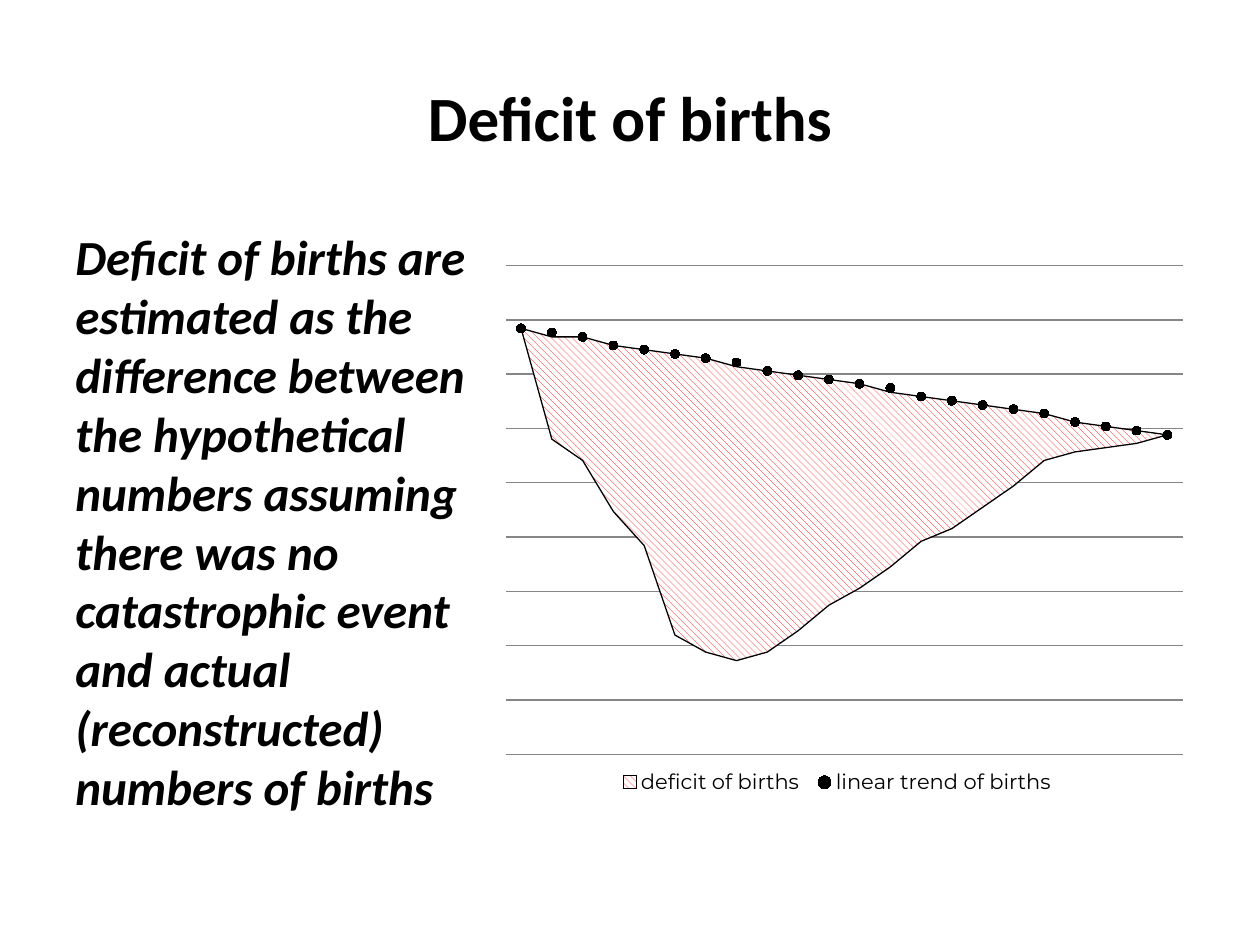
from dataclasses import dataclass

from pptx import Presentation
from pptx.chart.data import CategoryChartData
from pptx.dml.color import RGBColor
from pptx.enum.chart import XL_CHART_TYPE as ChartType
from pptx.enum.chart import XL_LEGEND_POSITION as LegendPosition
from pptx.enum.chart import XL_MARKER_STYLE as MarkerStyle
from pptx.enum.dml import MSO_PATTERN as Pattern
from pptx.enum.text import MSO_ANCHOR as Anchor
from pptx.enum.text import PP_ALIGN as Align
from pptx.oxml import parse_xml
from pptx.oxml.ns import nsdecls
from pptx.util import Cm, Pt

BLACK = RGBColor(0x00, 0x00, 0x00)
WHITE = RGBColor(0xFF, 0xFF, 0xFF)
RED = RGBColor(0xFF, 0x00, 0x00)
GRID_GRAY = RGBColor(0x86, 0x86, 0x86)

TITLE_ONLY = 5
GRID_STEP = 12.75
GRID_INTERVALS = 9

ACTUAL = (100, 74, 69, 57, 49, 28, 24, 22, 24, 29, 35,
          39, 44, 50, 53, 58, 63, 69, 71, 72, 73, 75)
DEFICIT = (0, 24, 29, 39, 46, 66, 69, 69, 66, 60, 53,
           48, 41, 34, 30, 24, 18, 11, 7, 5, 3, 0)
TREND = (100, 99, 98, 96, 95, 94, 93, 92, 90, 89, 88,
         87, 86, 84, 83, 82, 81, 80, 78, 77, 76, 75)


@dataclass(frozen=True)
class Box:
    left: float
    top: float
    width: float
    height: float

    def lengths(self):
        return tuple(Cm(v) for v in (self.left, self.top, self.width, self.height))


TITLE_BOX = Box(1.27, 0.76, 22.86, 3.18)
BODY_BOX = Box(1.27, 4.45, 8.84, 12.57)
CHART_BOX = Box(9.91, 5.13, 14.22, 11.2)
# Fractions of the chart area
PLOT_PART = Box(0.02, 0.02, 0.96, 0.88)
LEGEND_PART = Box(0.17, 0.91, 0.64, 0.08)


def set_text(shape, text: str, align, anchor, font_values: dict) -> None:
    frame = shape.text_frame
    frame.word_wrap = True
    frame.vertical_anchor = anchor
    paragraph = frame.paragraphs[0]
    paragraph.alignment = align
    run = paragraph.add_run()
    run.text = text
    run.font.color.rgb = BLACK
    for name, value in font_values.items():
        setattr(run.font, name, value)


def place_part(element, part: Box, after: str, inner: bool = False) -> None:
    """Give a chart part a manual layout; `after` names its preceding sibling."""
    for old_layout in element.xpath("c:layout"):
        element.remove(old_layout)
    target = '<c:layoutTarget val="inner"/>' if inner else ""
    layout = parse_xml(
        f'<c:layout {nsdecls("c")}><c:manualLayout>{target}'
        '<c:xMode val="edge"/><c:yMode val="edge"/>'
        f'<c:x val="{part.left}"/><c:y val="{part.top}"/>'
        f'<c:w val="{part.width}"/><c:h val="{part.height}"/>'
        '</c:manualLayout></c:layout>')
    previous = element.xpath(after) if after else []
    if previous:
        previous[-1].addnext(layout)
    else:
        element.insert(0, layout)


def move_last_series_to_line(plot_area) -> None:
    area = plot_area.xpath("c:areaChart")[0]
    line = parse_xml(
        f'<c:lineChart {nsdecls("c")}><c:grouping val="standard"/>'
        '<c:varyColors val="0"/><c:marker val="1"/></c:lineChart>')
    line.insert(2, area.xpath("c:ser")[-1])
    for axis_id in area.xpath("c:axId"):
        line.append(parse_xml(
            f'<c:axId {nsdecls("c")} val="{axis_id.get("val")}"/>'))
    area.addnext(line)


def add_births_chart(slide) -> None:
    data = CategoryChartData()
    data.categories = [str(n) for n in range(1, len(ACTUAL) + 1)]
    data.add_series("Series 1", ACTUAL)
    data.add_series("deficit of births", DEFICIT)
    data.add_series("linear trend of births", TREND)
    chart = slide.shapes.add_chart(
        ChartType.AREA_STACKED, *CHART_BOX.lengths(), data).chart
    chart.has_title = False
    chart.font.name, chart.font.size = "Calibri", Pt(10)
    chart.font.color.rgb = BLACK
    plot_area = chart.plots[0]._element.getparent()
    move_last_series_to_line(plot_area)
    place_part(plot_area, PLOT_PART, after="", inner=True)

    # Areas: an invisible base with the hatched deficit on top
    area_plot, line_plot = chart.plots
    area_plot.vary_by_categories = False
    base, deficit = area_plot.series
    base.format.fill.background()
    base.format.line.fill.background()
    fill = deficit.format.fill
    fill.patterned()
    fill.pattern = Pattern.WIDE_DOWNWARD_DIAGONAL
    fill.fore_color.rgb, fill.back_color.rgb = RED, WHITE
    deficit.format.line.color.rgb = BLACK
    deficit.format.line.width = Pt(0.75)

    # Trend: markers only
    trend = line_plot.series[0]
    trend.smooth = False
    trend.format.line.fill.background()
    trend.marker.style, trend.marker.size = MarkerStyle.CIRCLE, 5
    trend.marker.format.fill.solid()
    trend.marker.format.fill.fore_color.rgb = BLACK
    trend.marker.format.line.color.rgb = BLACK

    # Axes: hidden, gridlines kept
    chart.category_axis.visible = False
    chart.category_axis.has_major_gridlines = False
    axis_values = {
        "visible": False, "has_major_gridlines": True, "major_unit": GRID_STEP,
        "minimum_scale": 0, "maximum_scale": GRID_STEP * GRID_INTERVALS}
    for name, value in axis_values.items():
        setattr(chart.value_axis, name, value)
    grid_line = chart.value_axis.major_gridlines.format.line
    grid_line.color.rgb, grid_line.width = GRID_GRAY, Pt(0.75)
    for crossing in plot_area.xpath("c:valAx/c:crossBetween"):
        crossing.set("val", "between")

    # Legend without the base series
    chart.has_legend = True
    legend = chart.legend
    legend.position = LegendPosition.BOTTOM
    legend.include_in_layout = False
    legend.font.name, legend.font.size = "Montserrat", Pt(12)
    legend.font.color.rgb = BLACK
    legend_element = legend._element
    legend_element.xpath("c:legendPos")[0].addnext(parse_xml(
        f'<c:legendEntry {nsdecls("c")}><c:idx val="0"/>'
        '<c:delete val="1"/></c:legendEntry>'))
    place_part(legend_element, LEGEND_PART, after="c:legendEntry")


def main() -> None:
    presentation = Presentation()
    presentation.slide_width, presentation.slide_height = Cm(25.4), Cm(19.05)
    slide = presentation.slides.add_slide(presentation.slide_layouts[TITLE_ONLY])

    # Title
    title = slide.shapes.title
    title.left, title.top, title.width, title.height = TITLE_BOX.lengths()
    set_text(title, "Deficit of births", Align.CENTER, Anchor.MIDDLE,
             {"name": "Calibri", "size": Pt(36), "bold": True})

    # Explanation
    body = slide.shapes.add_textbox(*BODY_BOX.lengths())
    set_text(body, "Deficit of births are estimated as the difference between "
             "the hypothetical numbers assuming there was no catastrophic event "
             "and actual (reconstructed) numbers of births",
             Align.LEFT, Anchor.TOP,
             {"name": "Calibri", "size": Pt(28), "bold": True, "italic": True})
    body.text_frame.paragraphs[0].space_before = Pt(5.6)

    add_births_chart(slide)
    presentation.save("out.pptx")


if __name__ == "__main__":
    main()
